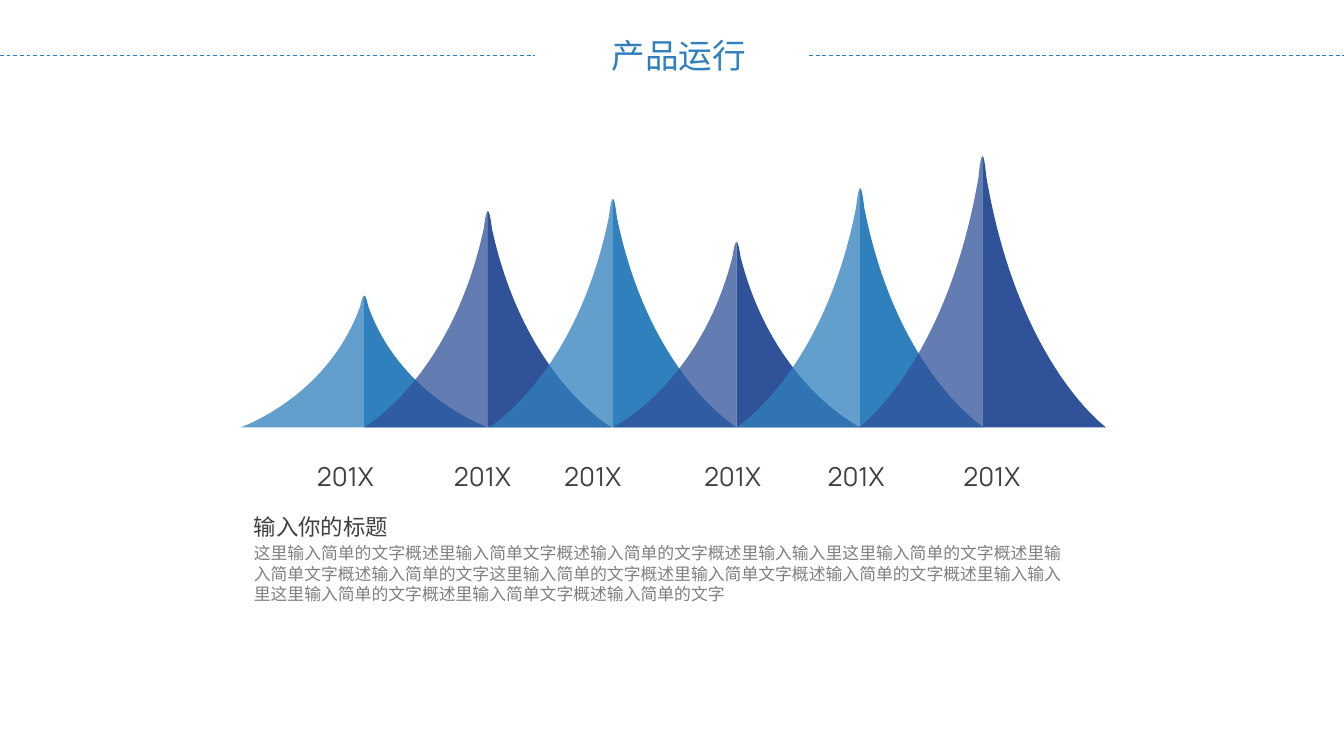
from lxml import etree
from pptx import Presentation
from pptx.dml.color import RGBColor
from pptx.enum.dml import MSO_LINE
from pptx.enum.text import MSO_ANCHOR, MSO_AUTO_SIZE, PP_ALIGN
from pptx.oxml.ns import qn
from pptx.util import Inches, Pt

BLUE = RGBColor(0x30, 0x80, 0xBD)
NAVY = RGBColor(0x30, 0x52, 0x99)
DARK = RGBColor(0x40, 0x40, 0x40)
GREY = RGBColor(0x80, 0x80, 0x80)
DASH = MSO_LINE.DASH
LEFT = PP_ALIGN.LEFT
TOP, MIDDLE = MSO_ANCHOR.TOP, MSO_ANCHOR.MIDDLE
NO_FIT, GROW = MSO_AUTO_SIZE.NONE, MSO_AUTO_SIZE.SHAPE_TO_FIT_TEXT
CHINESE, LATIN = "Noto Sans CJK SC", "Manrope"

BASE = 3.18
HALF_WIDTH = 0.92
PEAKS = [
    (2.71, 2.2, BLUE),
    (3.63, 1.57, NAVY),
    (4.56, 1.48, BLUE),
    (5.48, 1.8, NAVY),
    (6.4, 1.4, BLUE),
    (7.31, 1.16, NAVY),
]
FLANK = [(0.01, 0), (0.02, 0.03), (0.03, 0.08), (0.27, 0.77), (HALF_WIDTH, 1), (HALF_WIDTH, 1), (0, 1)]
LABEL_LEFTS = [2.26, 3.28, 4.1, 5.14, 6.06, 7.07]
DESCRIPTION = (
    "这里输入简单的文字概述里输入简单文字概述输入简单的文字概述里输入输入里"
    "这里输入简单的文字概述里输入简单文字概述输入简单的文字"
    "这里输入简单的文字概述里输入简单文字概述输入简单的文字概述里输入输入里"
    "这里输入简单的文字概述里输入简单文字概述输入简单的文字"
)


def write(para, text, size, color, name):
    para.alignment = LEFT
    span = para.add_run()
    span.text = text
    for key, value in {"size": Pt(size), "name": name}.items():
        setattr(span.font, key, value)
    span.font.color.rgb = color
    etree.SubElement(span.font._element, qn("a:ea"), typeface=name)


def set_frame(box, side, edge, wrap, fit, anchor):
    frame = box.text_frame
    values = {
        "margin_left": Inches(side),
        "margin_right": Inches(side),
        "margin_top": Inches(edge),
        "margin_bottom": Inches(edge),
        "word_wrap": wrap,
        "auto_size": fit,
        "vertical_anchor": anchor,
    }
    for key, value in values.items():
        setattr(frame, key, value)
    return frame


deck = Presentation()
deck.slide_width = Inches(10)
deck.slide_height = Inches(10) * 9 // 16
page = deck.slides.add_slide(deck.slide_layouts[5])

title = page.shapes.title
title.left, title.top = Inches(4.48), Inches(0.22)
title.width, title.height = Inches(1.16), Inches(0.38)
frame = set_frame(title, 0.07, 0.04, False, NO_FIT, MIDDLE)
write(frame.paragraphs[0], "产品运行", 18, BLUE, CHINESE)

for start, end in [(0, 3.98), (6.02, 10)]:
    rule = page.shapes.add_connector(1, Inches(start), Inches(0.41), Inches(end), Inches(0.41))
    rule.line.color.rgb = BLUE
    rule.line.width = Pt(0.5)
    rule.line.dash_style = DASH
    etree.SubElement(rule._element.spPr, qn("a:effectLst"))

for center, top, color in PEAKS:
    peak = page.shapes.add_group_shape()
    for side, opacity in [(-1, 75), (1, 100)]:
        points = [
            (Inches(center + side * across), Inches(top + down * (BASE - top)))
            for across, down in FLANK
        ]
        builder = peak.shapes.build_freeform(Inches(center), Inches(top))
        builder.add_line_segments(points, close=True)
        flank = builder.convert_to_shape()
        flank.shadow.inherit = False
        flank.fill.solid()
        flank.fill.fore_color.rgb = color
        flank.line.fill.background()
        if opacity < 100:
            tint = flank._element.spPr.find(".//" + qn("a:srgbClr"))
            etree.SubElement(tint, qn("a:alpha"), val=str(opacity * 1000))
        segments = flank._element.findall(".//" + qn("a:lnTo"))
        for first in (0, 3):
            curve = segments[first]
            curve.tag = qn("a:cubicBezTo")
            for segment in segments[first + 1:first + 3]:
                curve.append(segment[0])
                segment.getparent().remove(segment)

for left in LABEL_LEFTS:
    label = page.shapes.add_textbox(Inches(left), Inches(3.38), Inches(0.66), Inches(0.34))
    frame = set_frame(label, 0.1, 0.05, False, GROW, TOP)
    write(frame.paragraphs[0], "201X", 14, DARK, LATIN)

summary = page.shapes.add_textbox(Inches(1.79), Inches(3.77), Inches(6.31), Inches(1.38))
frame = set_frame(summary, 0.1, 0.05, True, NO_FIT, TOP)
heading = frame.paragraphs[0]
heading.line_spacing = Pt(14.4)
write(heading, "输入你的标题", 12, DARK, CHINESE)
detail = frame.add_paragraph()
detail.space_before = Pt(1.3)
detail.line_spacing = Pt(11)
write(detail, DESCRIPTION, 9, GREY, CHINESE)

deck.save("out.pptx")
